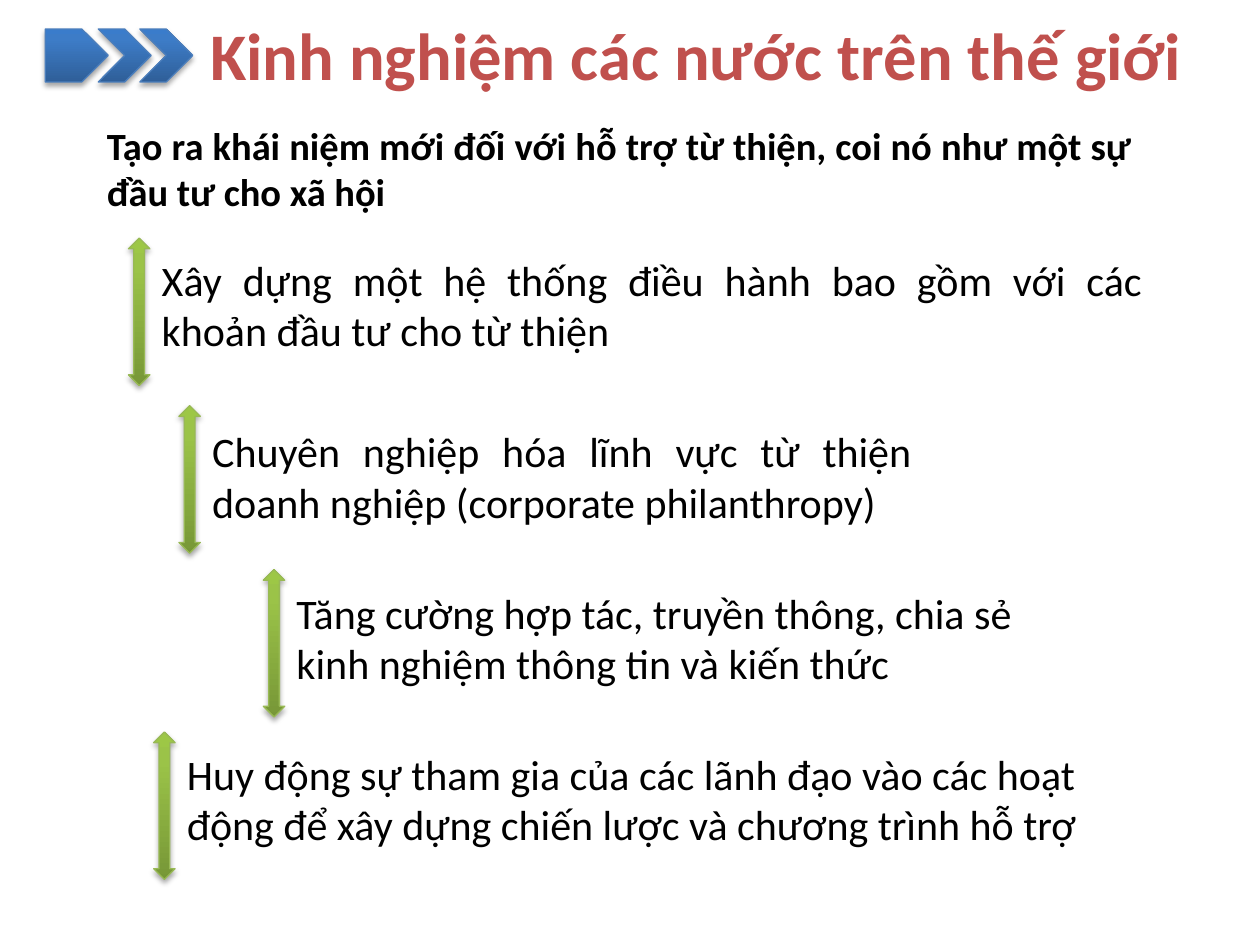
"""Build a slide on worldwide philanthropy experience with a staircase of arrowed steps."""
from pptx import Presentation
from pptx import util as u
from pptx.dml.color import RGBColor
from pptx.enum import shapes, text
from pptx.oxml import parse_xml
from pptx.oxml.ns import nsdecls

RED = RGBColor(0xC0, 0x50, 0x4D)
BLACK = RGBColor(0x00, 0x00, 0x00)
BLUE_LINE = RGBColor(0x4B, 0x7E, 0xBC)
GREEN_LINE = RGBColor(0x98, 0xB9, 0x55)
BLUES = [(0, RGBColor(0x2F, 0x5F, 0x99)), (80, RGBColor(0x3D, 0x7C, 0xC7)), (100, RGBColor(0x3A, 0x7C, 0xCB))]
GREENS = [(0, RGBColor(0x77, 0x97, 0x37)), (80, RGBColor(0x9B, 0xC3, 0x48)), (100, RGBColor(0x9D, 0xC7, 0x46))]

LEFT, JUSTIFY = text.PP_ALIGN.LEFT, text.PP_ALIGN.JUSTIFY
SHAPE = shapes.MSO_SHAPE

TITLE = "Kinh nghiệm các nước trên thế giới"
LEAD = "Tạo ra khái niệm mới đối với hỗ trợ từ thiện, coi nó như một sự đầu tư cho xã hội"
STEPS = [
    (10.2, 18.9, 19.7, 79.8, JUSTIFY,
     "Xây dựng một hệ thống điều hành bao gồm với các khoản đầu tư cho từ thiện"),
    (14.2, 32.2, 33.3, 57.5, JUSTIFY,
     "Chuyên nghiệp hóa lĩnh vực từ thiện doanh nghiệp (corporate philanthropy)"),
    (20.9, 45.2, 46.1, 62.4, LEFT,
     "Tăng cường hợp tác, truyền thông, chia sẻ kinh nghiệm thông tin và kiến thức"),
    (12.2, 58.1, 58.9, 74.4, LEFT,
     "Huy động sự tham gia của các lãnh đạo vào các hoạt động để xây dựng chiến lược và chương trình hỗ trợ"),
]
BANNER = [(SHAPE.CHEVRON, 7.8, 4.2), (SHAPE.PENTAGON, 3.6, 5), (SHAPE.CHEVRON, 11.1, 4.2)]
BANNER_TOP, BANNER_HEIGHT = 2.3, 4.2
ARROW_WIDTH, ARROW_HEIGHT, TEXT_OFFSET, STEP_HEIGHT = 1.7, 11.7, 1.65, 9.1

deck = Presentation()
deck.slide_width, deck.slide_height = u.Inches(10), u.Inches(7.5)
COLUMN, ROW = deck.slide_width / 100, deck.slide_height / 75
page = deck.slides.add_slide(deck.slide_layouts[6])


def place(left, top, width, height):
    return [round(size) for size in (left * COLUMN, top * ROW, width * COLUMN, height * ROW)]


def add_glossy(kind, area, stops, line_color):
    shape = page.shapes.add_shape(kind, *place(*area))
    shape.line.color.rgb = line_color
    shape.line.width = u.Pt(0.75)
    shape.shadow.inherit = False
    properties = shape.element.spPr
    marks = "".join(f'<a:gs pos="{share * 1000}"><a:srgbClr val="{color}"/></a:gs>' for share, color in stops)
    properties.insert(2, parse_xml(
        f'<a:gradFill {nsdecls("a")} rotWithShape="1"><a:gsLst>{marks}</a:gsLst>'
        '<a:lin ang="16200000" scaled="0"/></a:gradFill>'))
    properties[-1].append(parse_xml(
        f'<a:outerShdw {nsdecls("a")} blurRad="{u.Pt(3.1)}" dist="{u.Pt(1.8)}" dir="5400000" rotWithShape="0">'
        '<a:srgbClr val="000000"><a:alpha val="35000"/></a:srgbClr></a:outerShdw>'))


def add_text(words, area, size, color=BLACK, bold=False, align=LEFT):
    box = page.shapes.add_textbox(*place(*area))
    box.text_frame.word_wrap = True
    para = box.text_frame.paragraphs[0]
    para.alignment = align
    span = para.add_run()
    span.text = words
    span.font.name, span.font.size = "Calibri", u.Pt(size)
    span.font.bold, span.font.color.rgb = bold, color


for kind, left, width in BANNER:
    add_glossy(kind, (left, BANNER_TOP, width, BANNER_HEIGHT), BLUES, BLUE_LINE)
add_text(TITLE, (15.7, 0.6, 82.5, 7.4), 38, RED, True)
add_text(LEAD, (7.5, 9.2, 83.3, 8.4), 22, BLACK, True, JUSTIFY)

for left, arrow_top, text_top, width, align, words in STEPS:
    add_glossy(SHAPE.UP_DOWN_ARROW, (left, arrow_top, ARROW_WIDTH, ARROW_HEIGHT), GREENS, GREEN_LINE)
    add_text(words, (left + TEXT_OFFSET, text_top, width, STEP_HEIGHT), 24, align=align)

deck.save("out.pptx")
